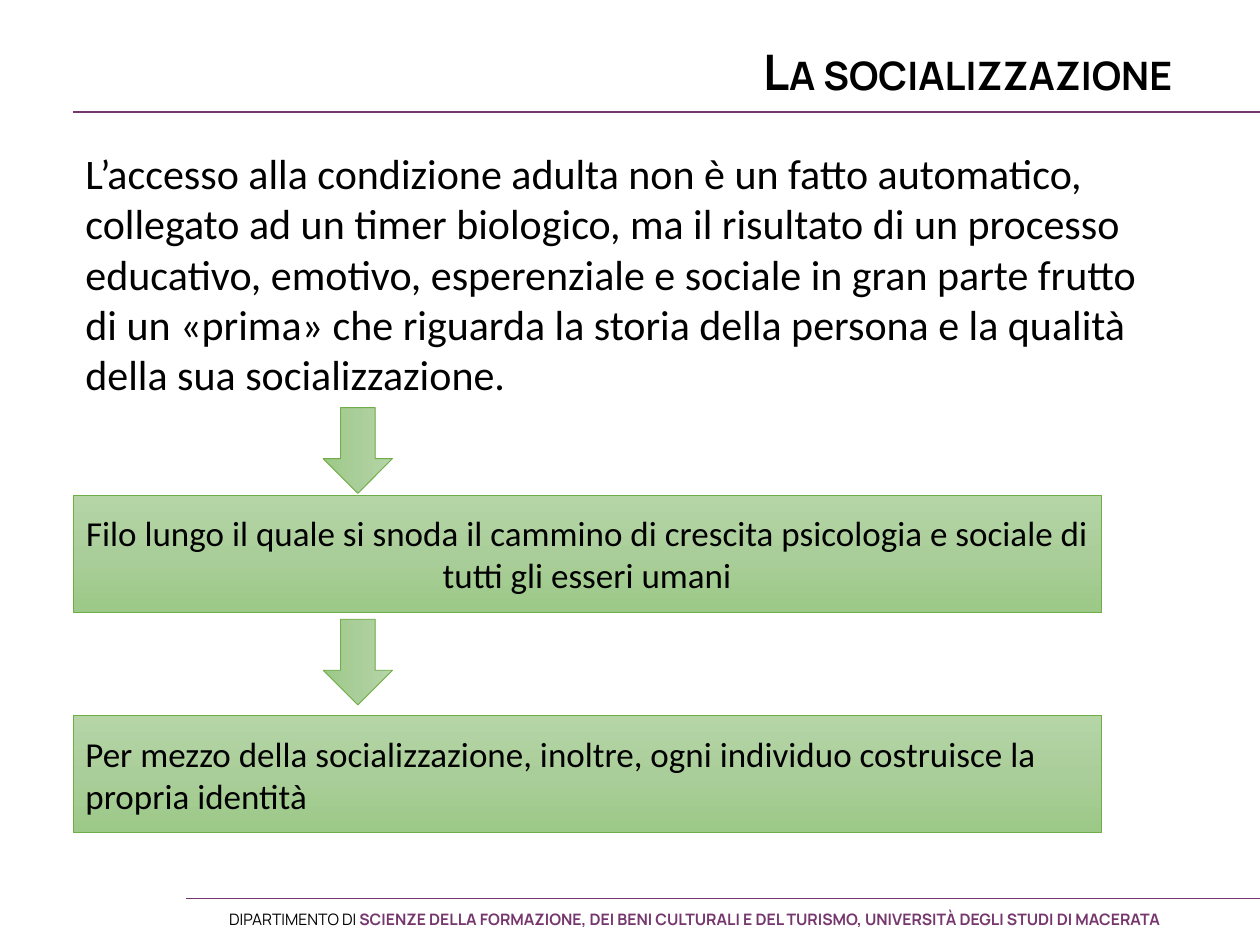
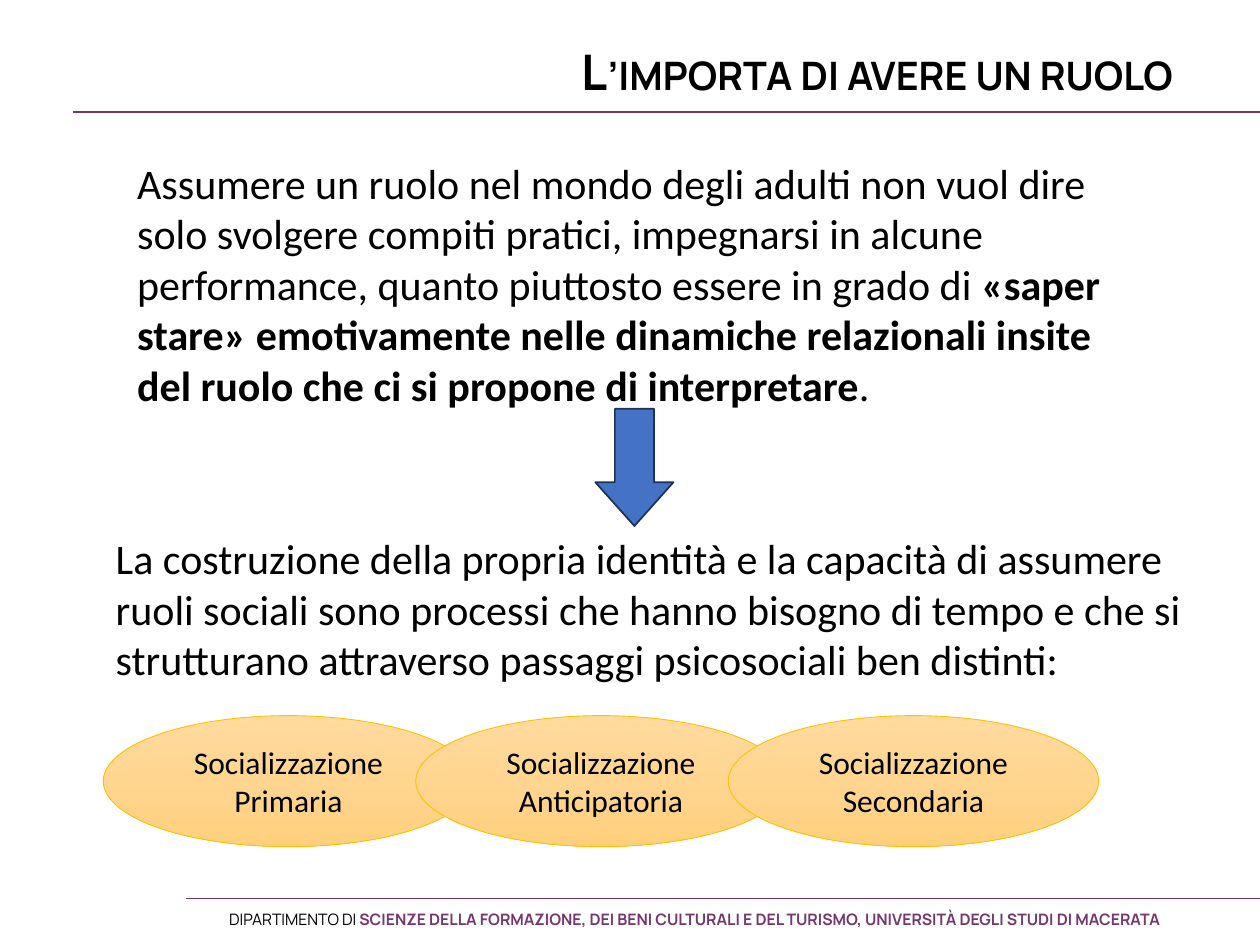
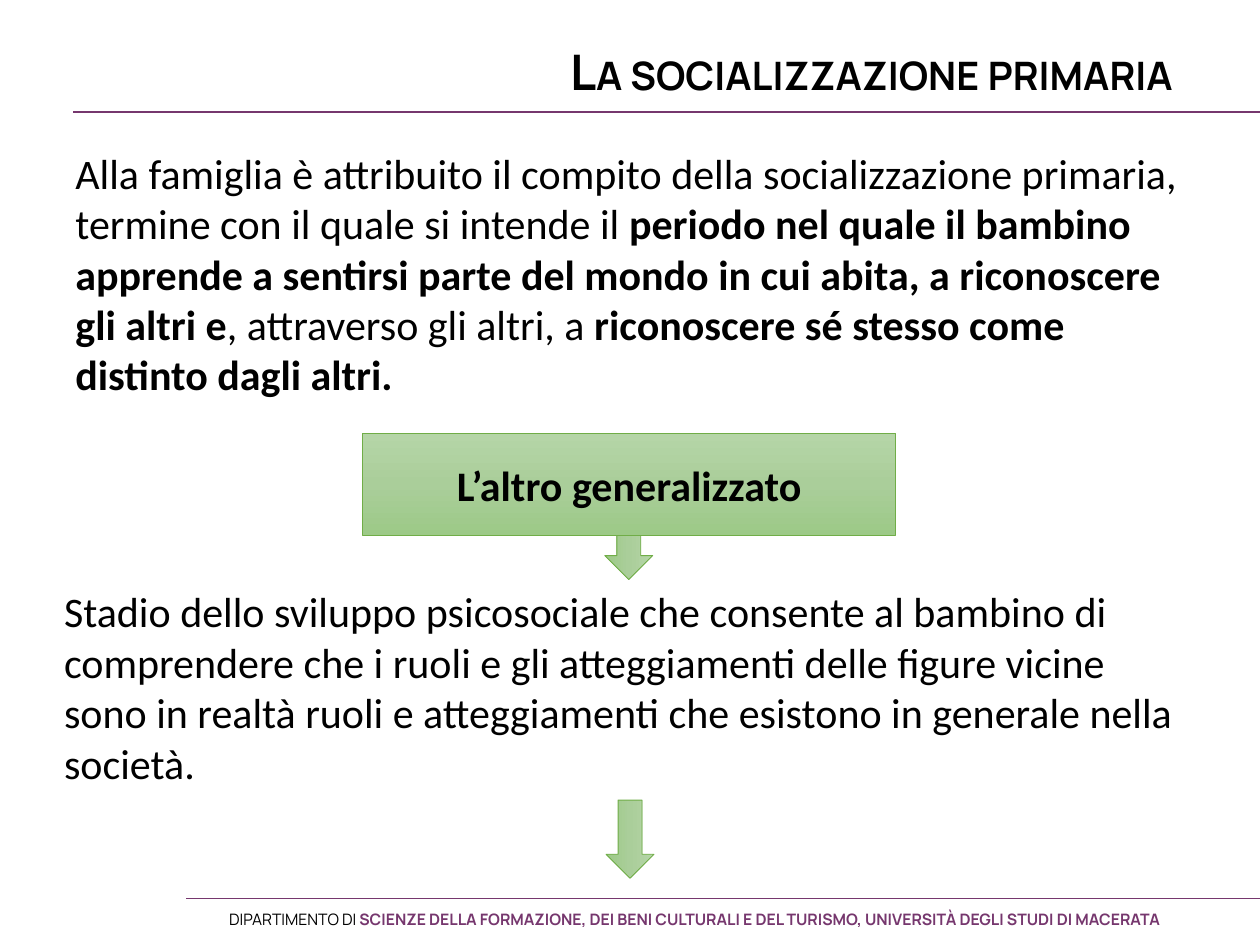
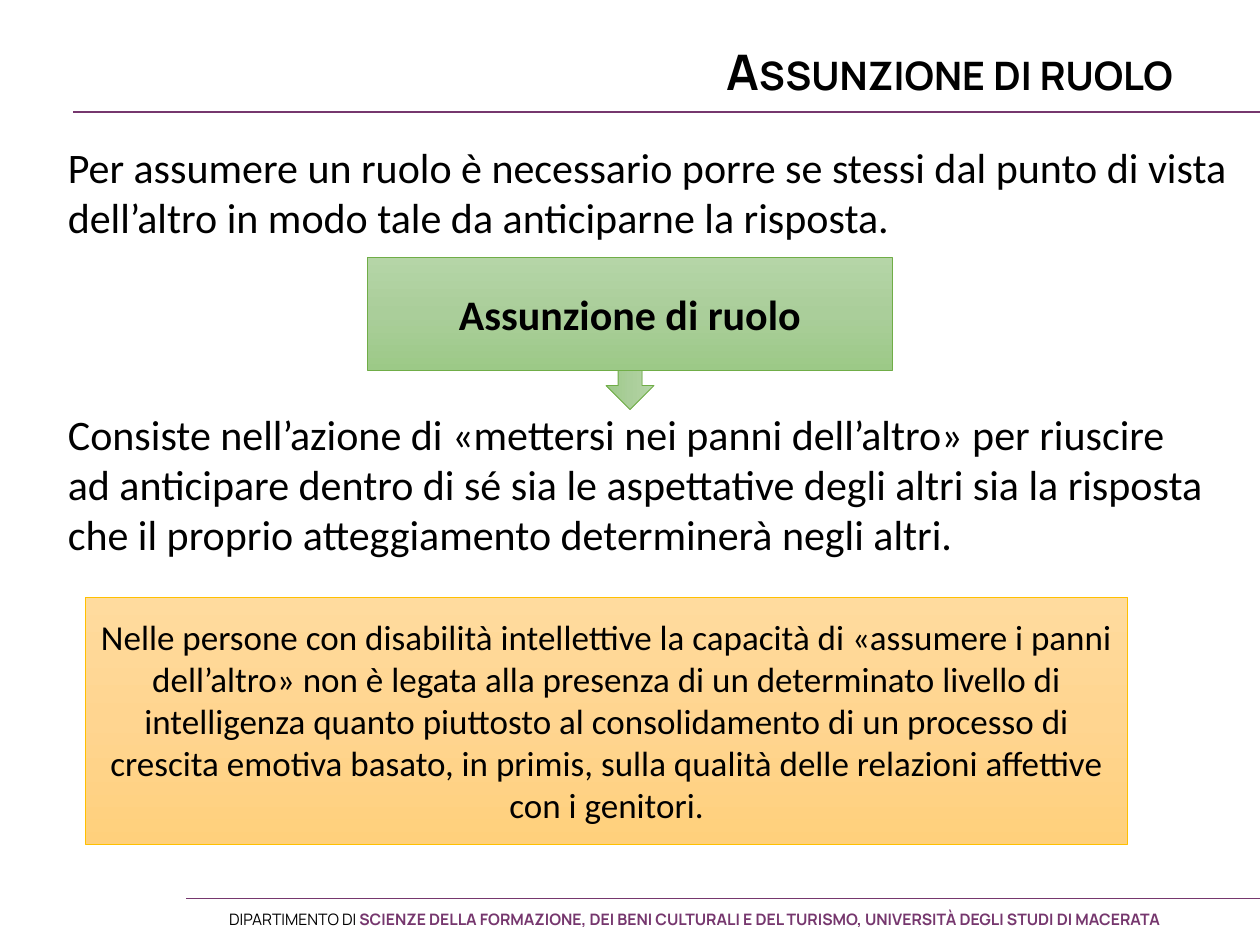
from copy import deepcopy
from lxml.etree import SubElement
from pptx import Presentation
from pptx.dml.color import RGBColor as Rgb
from pptx.enum.shapes import MSO_CONNECTOR as Link, MSO_SHAPE as Kind
from pptx.enum.text import MSO_ANCHOR as Anchor, MSO_AUTO_SIZE as Fit, PP_ALIGN as Align
from pptx.oxml.ns import qn
from pptx.util import Inches, Pt

HUE = {"ink": "000000", "plum": "76376E", "blue": "4472C4", "navy": "1E3256",
       "leaf": "70AD47", "gold": "FFC000"}
FADE = {"leaf": ("B5D5A7", "AACE9A", "9CC987"),
        "gold": ("FFDB9E", "FFD590", "FFD07C")}
BODY = {"name": "Calibri", "size": Pt(24)}
HEAD = {"name": "Manrope", "size": Pt(28), "bold": True}
FOOT = {"name": "Manrope", "size": Pt(9)}


def tint(name):
    return Rgb.from_string(HUE[name])


def apply(item, form):
    for key, value in form.items():
        setattr(item, key, value)


def place(left, top, width, height):
    return [Inches(n) for n in (left, top, width, height)]


def add_run(para, text, form, hue="ink"):
    run = para.add_run()
    run.text = text
    apply(run.font, form)
    run.font.color.rgb = tint(hue)
    return run


def write(frame, text, form, align=Align.LEFT):
    for i, line in enumerate(text.split("\n")):
        para = frame.add_paragraph() if i else frame.paragraphs[0]
        para.alignment = align
        for j, part in enumerate(line.split("*")):
            if part:
                add_run(para, part, {**form, "bold": j % 2 == 1})


def add_text(slide, box, text="", wrap=True):
    shape = slide.shapes.add_textbox(*place(*box))
    apply(shape.text_frame, {"word_wrap": wrap, "auto_size": Fit.SHAPE_TO_FIT_TEXT})
    if text:
        write(shape.text_frame, text, BODY)
    return shape


def add_fade(shape, name):
    fill = shape.fill
    fill.gradient()
    fill.gradient_angle = 270
    first, mid, last = FADE[name]
    for stop, color, spot in zip(fill.gradient_stops, (first, last), (0, 1)):
        stop.color.rgb = Rgb.from_string(color)
        stop.position = spot
    start = shape.element.spPr.find(".//" + qn("a:gs"))
    extra = deepcopy(start)
    extra.set("pos", "50000")
    extra.find(qn("a:srgbClr")).set("val", mid)
    start.addnext(extra)


def add_form(slide, kind, box, name, width=0.5):
    shape = slide.shapes.add_shape(kind, *place(*box))
    shape.shadow.inherit = False
    if name in FADE:
        add_fade(shape, name)
    else:
        shape.fill.solid()
        shape.fill.fore_color.rgb = tint(name)
    shape.line.color.rgb = tint(name)
    shape.line.width = Pt(width)
    return shape


def add_card(slide, box, text, size=24, name="leaf", kind=Kind.RECTANGLE, align=Align.CENTER):
    frame = add_form(slide, kind, box, name).text_frame
    apply(frame, {"word_wrap": True, "vertical_anchor": Anchor.MIDDLE})
    write(frame, text, {**BODY, "size": Pt(size)}, align)


def add_arrow(slide, box, name="leaf", width=0.5):
    shape = add_form(slide, Kind.RIGHT_ARROW, box, name, width)
    shape.rotation = 90
    return shape


def add_rule(slide, left, top):
    rule = slide.shapes.add_connector(
        Link.STRAIGHT, Inches(left), Inches(top), Inches(10), Inches(top))
    rule.line.color.rgb = tint("plum")
    rule.line.width = Pt(1)
    SubElement(rule.element.spPr, qn("a:effectLst"))
    return rule


def add_frame(slide):
    note = add_text(slide, (1.72, 7.17, 8.54, 0.25))
    para = note.text_frame.paragraphs[0]
    add_run(para, "DIPARTIMENTO DI ", FOOT)
    add_run(para, "SCIENZE DELLA FORMAZIONE, DEI BENI CULTURALI E DEL TURISMO, "
            "UNIVERSITÀ DEGLI STUDI DI MACERATA", {**FOOT, "bold": True}, "plum")
    tree = slide.slide_layout.shapes.element
    for part in (add_rule(slide, 0.58, 0.89), note, add_rule(slide, 1.48, 7.13)):
        tree.append(part.element)


def add_slide(deck, text):
    slide = deck.slides.add_slide(deck.slide_layouts[5])
    title = slide.shapes.title
    apply(title, dict(zip(("left", "top", "width", "height"), place(0.58, 0.07, 8.83, 1.05))))
    apply(title.text_frame, {"word_wrap": True, "auto_size": Fit.NONE,
                             "vertical_anchor": Anchor.MIDDLE})
    para = title.text_frame.paragraphs[0]
    apply(para, {"alignment": Align.RIGHT, "line_spacing": 0.9})
    run = add_run(para, text, HEAD)
    run.font._element.set("cap", "small")
    return slide


def add_social(deck):
    slide = add_slide(deck, "La socializzazione")
    add_frame(slide)
    add_text(slide, (0.58, 1.12, 8.83, 2.12),
             "L’accesso alla condizione adulta non è un fatto automatico, collegato ad un "
             "timer biologico, ma il risultato di un processo educativo, emotivo, esperenziale "
             "e sociale in gran parte frutto di un «prima» che riguarda la storia della "
             "persona e la qualità della sua socializzazione.")
    add_card(slide, (0.58, 3.93, 8.16, 0.93),
             "Filo lungo il quale si snoda il cammino di crescita psicologia e sociale di "
             "tutti gli esseri umani", 20)
    add_card(slide, (0.58, 5.68, 8.16, 0.93),
             "Per mezzo della socializzazione, inoltre, ogni individuo costruisce la propria "
             "identità", 20, align=Align.LEFT)
    for top in (3.3, 4.98):
        add_arrow(slide, (2.5, top, 0.68, 0.55))


def add_role(deck):
    slide = add_slide(deck, "L’importa di avere un ruolo")
    add_text(slide, (0.99, 1.2, 8.24, 2.12),
             "Assumere un ruolo nel mondo degli adulti non vuol dire solo svolgere compiti "
             "pratici, impegnarsi in alcune performance, quanto piuttosto essere in grado di "
             "*«saper stare» emotivamente nelle dinamiche relazionali insite del ruolo che "
             "ci si propone di interpretare*.")
    arrow = add_arrow(slide, (4.57, 3.4, 0.93, 0.62), "blue", 1)
    arrow.line.color.rgb = tint("navy")
    arrow.adjustments[1] = 0.56
    add_text(slide, (0.82, 4.18, 8.83, 1.31),
             "La costruzione della propria identità e la capacità di assumere ruoli sociali "
             "sono processi che hanno bisogno di tempo e che si strutturano attraverso "
             "passaggi psicosociali ben distinti:")
    for i, stage in enumerate(("Primaria", "Anticipatoria", "Secondaria")):
        add_card(slide, (0.82 + 2.48 * i, 5.68, 2.94, 1.04),
                 f"Socializzazione {stage}", 18, "gold", Kind.OVAL)


def add_first(deck):
    slide = add_slide(deck, "La socializzazione primaria")
    add_text(slide, (0.5, 1.12, 8.98, 2.12),
             "Alla famiglia è attribuito il compito della socializzazione primaria, termine "
             "con il quale si intende il *periodo nel quale il bambino apprende a sentirsi "
             "parte del mondo in cui abita, a riconoscere gli altri e*, attraverso gli altri, "
             "a *riconoscere sé stesso come distinto dagli altri.*")
    add_arrow(slide, (4.68, 4.1, 0.62, 0.38))
    add_card(slide, (2.88, 3.44, 4.23, 0.81), "*L’altro generalizzato*")
    add_text(slide, (0.41, 4.6, 9.01, 1.72),
             "Stadio dello sviluppo psicosociale che consente al bambino di comprendere che "
             "i ruoli e gli atteggiamenti delle figure vicine sono in realtà ruoli e "
             "atteggiamenti che esistono in generale nella società.")
    add_arrow(slide, (4.69, 6.47, 0.62, 0.38))


def add_taking(deck):
    slide = add_slide(deck, "Assunzione di ruolo")
    add_text(slide, (0.44, 1.07, 9.56, 0.91),
             "Per assumere un ruolo è necessario porre se stessi dal punto di vista\n"
             "dell’altro in modo tale da anticiparne la risposta.", False)
    add_arrow(slide, (4.69, 2.75, 0.62, 0.38))
    add_card(slide, (2.92, 2.04, 4.16, 0.9), "*Assunzione di ruolo*")
    add_text(slide, (0.44, 3.19, 9.29, 1.31),
             "Consiste nell’azione di «mettersi nei panni dell’altro» per riuscire ad "
             "anticipare dentro di sé sia le aspettative degli altri sia la risposta che il "
             "proprio atteggiamento determinerà negli altri.")
    add_card(slide, (0.68, 4.74, 8.27, 1.96),
             "Nelle persone con disabilità intellettive la capacità di «assumere i panni "
             "dell’altro» non è legata alla presenza di un determinato livello di "
             "intelligenza quanto piuttosto al consolidamento di un processo di crescita "
             "emotiva basato, in primis, sulla qualità delle relazioni affettive con i "
             "genitori.", 20, "gold")


def main():
    deck = Presentation()
    apply(deck, {"slide_width": Inches(10), "slide_height": Inches(7.5)})
    for build in (add_social, add_role, add_first, add_taking):
        build(deck)
    deck.save("out.pptx")


if __name__ == "__main__":
    main()
